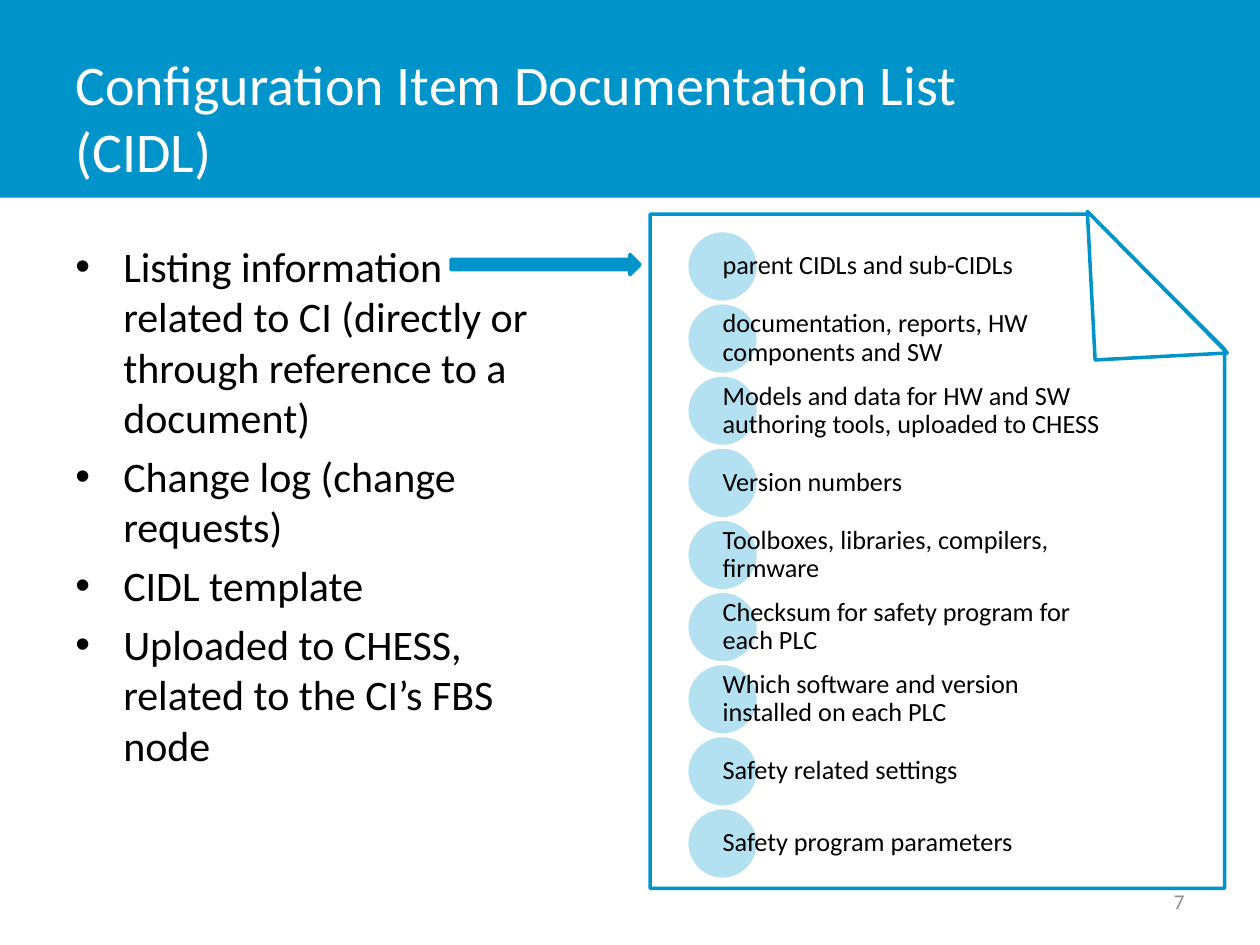
"""Builds the slide on the Configuration Item Documentation List."""
from lxml import etree
from pptx import Presentation
from pptx.dml.color import RGBColor
from pptx.enum.shapes import MSO_SHAPE
from pptx.enum.text import MSO_ANCHOR, PP_ALIGN
from pptx.oxml.ns import qn
from pptx.util import Inches, Pt

RECTANGLE, OVAL = MSO_SHAPE.RECTANGLE, MSO_SHAPE.OVAL
PAGE, FOLD = MSO_SHAPE.SNIP_1_RECTANGLE, MSO_SHAPE.RIGHT_TRIANGLE
ARROW = MSO_SHAPE.RIGHT_ARROW
TOP, MIDDLE = MSO_ANCHOR.TOP, MSO_ANCHOR.MIDDLE
LEFT, RIGHT = PP_ALIGN.LEFT, PP_ALIGN.RIGHT

FONT = "Calibri"
COLORS = {
    "brand": "0094CA",
    "dot": "059ED6",
    "white": "FFFFFF",
    "black": "000000",
    "gray": "8C8C8C",
}
TITLE = "Configuration Item Documentation List (CIDL)"
SLIDE_NUMBER = "7"
BULLETS = [
    "Listing information related to CI (directly or through reference to a document)",
    "Change log (change requests)",
    "CIDL template",
    "Uploaded to CHESS, related to the CI’s FBS node",
]
CONTENTS = [
    "parent CIDLs and sub-CIDLs",
    "documentation, reports, HW components and SW",
    "Models and data for HW and SW authoring tools, uploaded to CHESS",
    "Version numbers",
    "Toolboxes, libraries, compilers, firmware",
    "Checksum for safety program for each PLC",
    "Which software and version installed on each PLC",
    "Safety related settings",
    "Safety program parameters",
]
DOT_LEFT, DOT_TOP, DOT_SIZE, DOT_PITCH = 5.45, 1.83, 0.57, 0.5725
ITEM_WIDTH = 3.05


def color(name):
    return RGBColor.from_string(COLORS[name])


def add_bullet(paragraph, indent):
    properties = paragraph._p.get_or_add_pPr()
    properties.set("marL", str(Inches(indent)))
    properties.set("indent", str(-Inches(indent)))
    etree.SubElement(properties, qn("a:buFont"), typeface="Arial")
    etree.SubElement(properties, qn("a:buChar"), char="•")


def add_text(slide, texts, box, size, font_color="black", anchor=TOP, align=LEFT,
             insets=(0.1, 0.05), line_spacing=None, space_before=0, indent=None):
    shape = slide.shapes.add_textbox(*map(Inches, box))
    frame = shape.text_frame
    frame.word_wrap = True
    frame.vertical_anchor = anchor
    frame.margin_left = frame.margin_right = Inches(insets[0])
    frame.margin_top = frame.margin_bottom = Inches(insets[1])
    for index, text in enumerate(texts):
        paragraph = frame.add_paragraph() if index else frame.paragraphs[0]
        if indent:
            add_bullet(paragraph, indent)
        paragraph.text = text
        paragraph.alignment = align
        if line_spacing:
            paragraph.line_spacing = line_spacing
        if index:
            paragraph.space_before = Pt(space_before)
        paragraph.font.name = FONT
        paragraph.font.size = Pt(size)
        paragraph.font.color.rgb = color(font_color)


def add_shape(slide, kind, box, fill, line=None, alpha=None):
    shape = slide.shapes.add_shape(kind, *map(Inches, box))
    shape.shadow.inherit = False
    shape.fill.solid()
    shape.fill.fore_color.rgb = color(fill)
    if alpha:
        fill_color = shape._element.spPr.find(qn("a:solidFill"))[0]
        etree.SubElement(fill_color, qn("a:alpha"), val=str(alpha * 1000))
    if line:
        shape.line.color.rgb = color(line)
        shape.line.width = Pt(2)
    else:
        shape.line.fill.background()
    return shape


def main():
    presentation = Presentation()
    presentation.slide_width, presentation.slide_height = Inches(10), Inches(7.5)
    slide = presentation.slides.add_slide(presentation.slide_layouts[6])

    add_shape(slide, RECTANGLE, (0, 0, 10, 1.57), "brand")
    add_text(slide, [TITLE], (0.5, 0.3, 7.81, 1.25), 32, "white", anchor=MIDDLE)
    add_text(slide, BULLETS, (0.5, 1.86, 3.95, 4.95), 24, space_before=4.8, indent=0.38)
    add_text(slide, [SLIDE_NUMBER], (7.17, 6.95, 2.33, 0.4), 12, "gray",
             anchor=MIDDLE, align=RIGHT)

    page = add_shape(slide, PAGE, (5.16, 1.7, 4.56, 5.35), "white", "brand")
    page.adjustments[0] = 0.235
    fold = add_shape(slide, FOLD, (8.66, 1.65, 1.05, 1.18), "white", "brand")
    fold.rotation = 357

    for index, item in enumerate(CONTENTS):
        top = DOT_TOP + index * DOT_PITCH
        add_shape(slide, OVAL, (DOT_LEFT, top, DOT_SIZE, DOT_SIZE), "dot", "white", alpha=30)
        add_text(slide, [item], (DOT_LEFT + DOT_SIZE / 2, top, ITEM_WIDTH, DOT_SIZE), 15,
                 anchor=MIDDLE, insets=(0, 0.02), line_spacing=0.9)

    add_shape(slide, ARROW, (3.58, 2.02, 1.5, 0.16), "brand", "brand")
    presentation.save("out.pptx")


if __name__ == "__main__":
    main()
